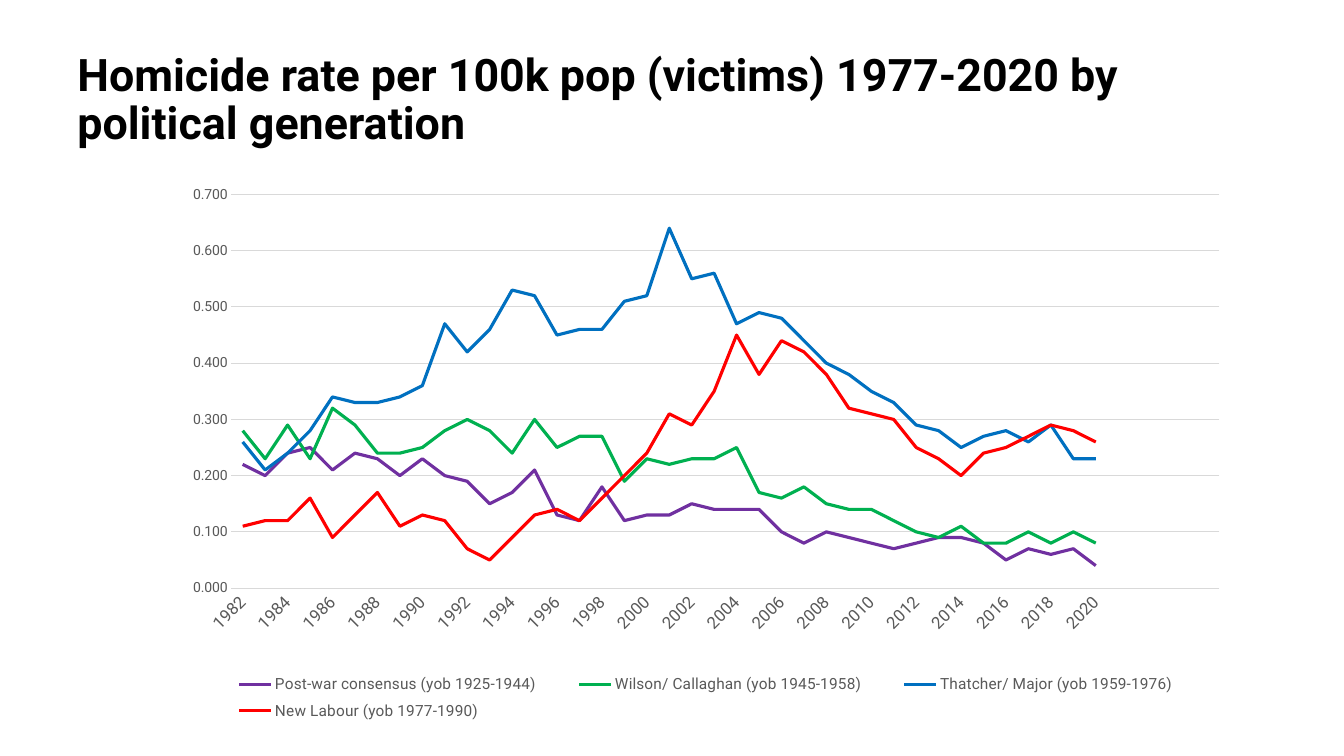
from lxml.etree import SubElement
from pptx import Presentation
from pptx.chart.data import CategoryChartData
from pptx.dml.color import RGBColor
from pptx.enum.chart import XL_CHART_TYPE, XL_LEGEND_POSITION, XL_TICK_MARK
from pptx.enum.text import MSO_ANCHOR
from pptx.oxml.ns import qn
from pptx.util import Cm, Pt

BLACK = RGBColor(0x00, 0x00, 0x00)
GRAY = RGBColor(0x59, 0x59, 0x59)
LIGHT_GRAY = RGBColor(0xD9, 0xD9, 0xD9)
PURPLE = RGBColor(0x70, 0x30, 0xA0)
GREEN = RGBColor(0x00, 0xB0, 0x50)
BLUE = RGBColor(0x00, 0x70, 0xC0)
RED = RGBColor(0xFF, 0x00, 0x00)

FIRST_YEAR, LAST_YEAR, EMPTY_SLOTS = 1982, 2020, 5

GENERATIONS = [
    ("Post-war consensus (yob 1925-1944)", PURPLE, [
        0.22, 0.2, 0.24, 0.25, 0.21, 0.24, 0.23, 0.2, 0.23, 0.2,
        0.19, 0.15, 0.17, 0.21, 0.13, 0.12, 0.18, 0.12, 0.13, 0.13,
        0.15, 0.14, 0.14, 0.14, 0.1, 0.08, 0.1, 0.09, 0.08, 0.07,
        0.08, 0.09, 0.09, 0.08, 0.05, 0.07, 0.06, 0.07, 0.04]),
    ("Wilson/ Callaghan (yob 1945-1958)", GREEN, [
        0.28, 0.23, 0.29, 0.23, 0.32, 0.29, 0.24, 0.24, 0.25, 0.28,
        0.3, 0.28, 0.24, 0.3, 0.25, 0.27, 0.27, 0.19, 0.23, 0.22,
        0.23, 0.23, 0.25, 0.17, 0.16, 0.18, 0.15, 0.14, 0.14, 0.12,
        0.1, 0.09, 0.11, 0.08, 0.08, 0.1, 0.08, 0.1, 0.08]),
    ("Thatcher/ Major (yob 1959-1976)", BLUE, [
        0.26, 0.21, 0.24, 0.28, 0.34, 0.33, 0.33, 0.34, 0.36, 0.47,
        0.42, 0.46, 0.53, 0.52, 0.45, 0.46, 0.46, 0.51, 0.52, 0.64,
        0.55, 0.56, 0.47, 0.49, 0.48, 0.44, 0.4, 0.38, 0.35, 0.33,
        0.29, 0.28, 0.25, 0.27, 0.28, 0.26, 0.29, 0.23, 0.23]),
    ("New Labour (yob 1977-1990)", RED, [
        0.11, 0.12, 0.12, 0.16, 0.09, 0.13, 0.17, 0.11, 0.13, 0.12,
        0.07, 0.05, 0.09, 0.13, 0.14, 0.12, 0.16, 0.2, 0.24, 0.31,
        0.29, 0.35, 0.45, 0.38, 0.44, 0.42, 0.38, 0.32, 0.31, 0.3,
        0.25, 0.23, 0.2, 0.24, 0.25, 0.27, 0.29, 0.28, 0.26]),
]


class SlideBuilder:
    """Holds the typeface and the current slide, and adds elements to it."""

    def __init__(self, page, typeface):
        self.page = page
        self.typeface = typeface

    def style_font(self, font, size, color, bold=False):
        font.name = self.typeface
        font.size = Pt(size)
        font.color.rgb = color
        font.bold = bold

    def add_title(self, text, left, top, width, height):
        box = self.page.shapes.add_textbox(left, top, width, height)
        frame = box.text_frame
        frame.word_wrap = True
        frame.vertical_anchor = MSO_ANCHOR.MIDDLE
        para = frame.paragraphs[0]
        para.text = text
        para.line_spacing = 0.9
        self.style_font(para.font, 32, BLACK, bold=True)

    def add_line_chart(self, left, top, width, height):
        data = CategoryChartData(number_format="0.000")
        years = [str(year) for year in range(FIRST_YEAR, LAST_YEAR + 1)]
        data.categories = years + [""] * EMPTY_SLOTS
        for name, _, rates in GENERATIONS:
            data.add_series(name, rates + [None] * EMPTY_SLOTS)
        chart = self.page.shapes.add_chart(
            XL_CHART_TYPE.LINE, left, top, width, height, data).chart
        chart.has_title = False
        self.style_font(chart.font, 10, BLACK)
        plot = chart.plots[0]
        plot.vary_by_categories = False
        for series, (_, color, _) in zip(plot.series, GENERATIONS):
            series.smooth = False
            series.format.line.color.rgb = color
            series.format.line.width = Pt(2.25)
        self.style_axes(chart)
        self.style_legend(chart)
        plot_area = plot._element.getparent()
        self.place(plot_area, 0, 0.086, 0.088, 0.862, 0.651, inner=True)

    def style_axes(self, chart):
        years, rates = chart.category_axis, chart.value_axis
        for axis, size in ((years, 12), (rates, 10)):
            axis.major_tick_mark = XL_TICK_MARK.NONE
            axis.minor_tick_mark = XL_TICK_MARK.NONE
            self.style_font(axis.tick_labels.font, size, GRAY)
        years.format.line.color.rgb = LIGHT_GRAY
        years.format.line.width = Pt(0.75)
        years._element.find(qn("c:txPr")).find(qn("a:bodyPr")).set("rot", "-2700000")
        skip = years._element.makeelement(qn("c:tickLblSkip"), {"val": "2"})
        years._element.find(qn("c:noMultiLvlLbl")).addprevious(skip)
        rates.minimum_scale, rates.maximum_scale, rates.major_unit = 0, 0.7, 0.1
        rates.tick_labels.number_format = "0.000"
        rates.tick_labels.number_format_is_linked = False
        rates.format.line.fill.background()
        grid = rates.major_gridlines.format.line
        grid.color.rgb = LIGHT_GRAY
        grid.width = Pt(0.75)

    def style_legend(self, chart):
        chart.has_legend = True
        legend = chart.legend
        legend.position = XL_LEGEND_POSITION.BOTTOM
        legend.include_in_layout = False
        self.style_font(legend.font, 11, GRAY)
        self.place(legend._element, 1, 0.06, 0.87, 0.88, 0.1)

    def place(self, parent, index, left, top, width, height, inner=False):
        for layout in parent.findall(qn("c:layout")):
            parent.remove(layout)
        layout = parent.makeelement(qn("c:layout"), {})
        parent.insert(index, layout)
        manual = SubElement(layout, qn("c:manualLayout"))
        settings = [("layoutTarget", "inner")] if inner else []
        settings += [("xMode", "edge"), ("yMode", "edge"),
                     ("x", left), ("y", top), ("w", width), ("h", height)]
        for name, value in settings:
            SubElement(manual, qn("c:" + name), val=str(value))


def main():
    deck = Presentation()
    deck.slide_width, deck.slide_height = Cm(33.87), Cm(19.05)
    page = deck.slides.add_slide(deck.slide_layouts[6])
    builder = SlideBuilder(page, "Roboto")
    builder.add_title(
        "Homicide rate per 100k pop (victims) 1977-2020 by political generation",
        Cm(1.7), Cm(0.97), Cm(29.21), Cm(3.15))
    builder.add_line_chart(Cm(3.35), Cm(3.56), Cm(28.88), Cm(15.24))
    deck.save("out.pptx")


if __name__ == "__main__":
    main()
